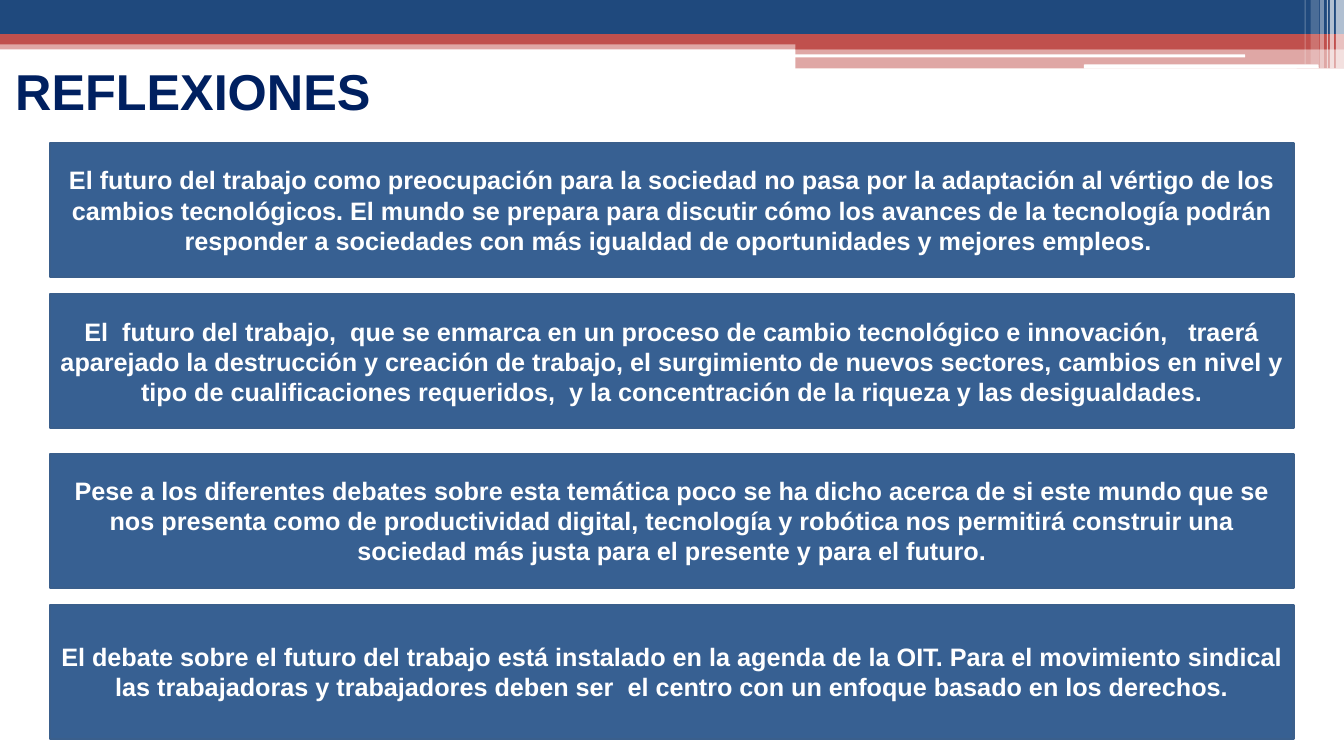
from lxml.etree import SubElement
from pptx import Presentation
from pptx.dml.color import RGBColor
from pptx.enum.shapes import MSO_SHAPE
from pptx.enum.text import MSO_ANCHOR, MSO_AUTO_SIZE, PP_ALIGN
from pptx.oxml.ns import qn
from pptx.util import Inches, Pt

WHITE = RGBColor(0xFF, 0xFF, 0xFF)
NAVY = RGBColor(0x1F, 0x49, 0x7D)
RED = RGBColor(0xC0, 0x50, 0x4D)
INK = RGBColor(0x00, 0x20, 0x60)
BLUE = RGBColor(0x37, 0x60, 0x92)
EDGE = RGBColor(0x3A, 0x5F, 0x8C)

WIDE, HIGH = 13.33, 7.5

IDEAS = [
    (1.42, "El futuro del trabajo como preocupación para la sociedad no pasa por la adaptación al vértigo de los cambios tecnológicos. El mundo se prepara para discutir cómo los avances de la tecnología podrán responder a sociedades con más igualdad de oportunidades y mejores empleos. "),
    (2.92, "El  futuro del trabajo,  que se enmarca en un proceso de cambio tecnológico e innovación,   traerá aparejado la destrucción y creación de trabajo, el surgimiento de nuevos sectores, cambios en nivel y tipo de cualificaciones requeridos,  y la concentración de la riqueza y las desigualdades."),
    (4.5, "Pese a los diferentes debates sobre esta temática poco se ha dicho acerca de si este mundo que se nos presenta como de productividad digital, tecnología y robótica nos permitirá construir una sociedad más justa para el presente y para el futuro."),
    (6, "El debate sobre el futuro del trabajo está instalado en la agenda de la OIT. Para el movimiento sindical las trabajadoras y trabajadores deben ser  el centro con un enfoque basado en los derechos."),
]


def add_block(slide, box, color, alpha=100, kind=MSO_SHAPE.RECTANGLE):
    block = slide.shapes.add_shape(kind, *map(Inches, box))
    block.shadow.inherit = False
    block.fill.solid()
    block.fill.fore_color.rgb = color
    block.line.fill.background()
    if alpha < 100:
        tint = block.fill._xPr.find(qn("a:solidFill"))[0]
        SubElement(tint, qn("a:alpha")).set("val", str(alpha * 1000))
    return block


def add_bands(slide, left, top, width):
    half = left + 7.89
    rest = width - 7.89
    add_block(slide, (left, top + 0.4, width, 0.09), RED, 50)
    add_block(slide, (left, top, width, 0.34), NAVY)
    add_block(slide, (left, top + 0.34, width, 0.1), RED)
    add_block(slide, (half, top + 0.39, rest, 0.1), RED)
    add_block(slide, (half, top + 0.48, rest, 0.2), RED, 50)
    for x, y, w, h in [(7.88, 0.54, 4.47, 0.03), (10.75, 0.64, 2.33, 0.04)]:
        add_block(slide, (left + x, top + y, w, h), WHITE,
                  kind=MSO_SHAPE.ROUNDED_RECTANGLE)


def add_stripes(slide, right, top):
    stripes = [
        (0.08, 0.08, 0.68, 65), (0.14, 0.04, 0.68, 65),
        (0.17, 0.01, 0.68, 60), (0.24, 0.04, 0.68, 40),
        (0.33, 0.08, 0.64, 20), (0.39, 0.01, 0.64, 30),
    ]
    for back, width, height, alpha in stripes:
        add_block(slide, (right - back, top, width, height), WHITE, alpha)


def style_text(frame, size, color, align):
    frame.word_wrap = True
    frame.auto_size = MSO_AUTO_SIZE.NONE
    frame.vertical_anchor = MSO_ANCHOR.MIDDLE
    line = frame.paragraphs[0]
    line.alignment = align
    line.font.name = "Arial"
    line.font.size = Pt(size)
    line.font.bold = True
    line.font.color.rgb = color


def set_title(slide, left, top, width, height):
    title = slide.shapes.title
    title.left, title.top = Inches(left), Inches(top)
    title.width, title.height = Inches(width), Inches(height)
    title.text_frame.text = "REFLEXIONES"
    style_text(title.text_frame, 36, INK, PP_ALIGN.LEFT)


def add_ideas(slide, left, width, height):
    for top, text in IDEAS:
        card = add_block(slide, (left, top, width, height), BLUE)
        card.line.color.rgb = EDGE
        card.line.width = Pt(1.5)
        card.text_frame.text = text
        style_text(card.text_frame, 18, WHITE, PP_ALIGN.CENTER)


def main():
    deck = Presentation()
    deck.slide_width, deck.slide_height = Inches(WIDE), Inches(HIGH)
    slide = deck.slides.add_slide(deck.slide_layouts[5])
    add_bands(slide, 0, 0, WIDE)
    add_stripes(slide, WIDE, 0)
    set_title(slide, 0.05, 0.55, 10.28, 0.69)
    add_ideas(slide, 0.5, 12.33, 1.33)
    deck.save("out.pptx")


if __name__ == "__main__":
    main()
